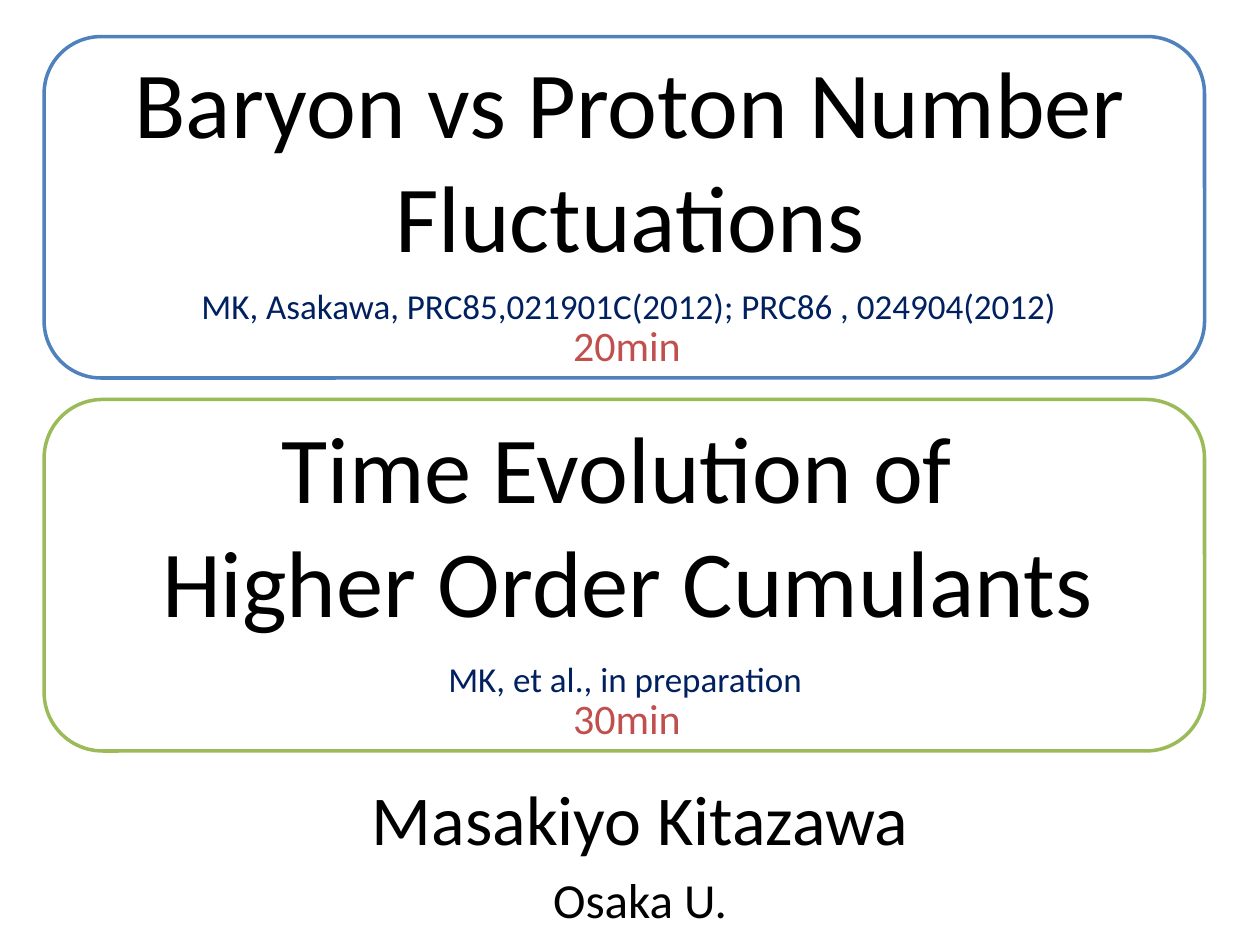
from dataclasses import dataclass

from pptx import Presentation
from pptx.dml.color import RGBColor
from pptx.enum.shapes import MSO_SHAPE
from pptx.enum.text import MSO_ANCHOR, PP_ALIGN
from pptx.slide import Slide
from pptx.util import Inches, Pt

WHITE = RGBColor(0xFF, 0xFF, 0xFF)
BLACK = RGBColor(0x00, 0x00, 0x00)
BLUE = RGBColor(0x4F, 0x81, 0xBD)
GREEN = RGBColor(0x9B, 0xBB, 0x59)
NAVY = RGBColor(0x00, 0x20, 0x60)
RED = RGBColor(0xC0, 0x50, 0x4D)


@dataclass
class Line:
    text: str
    size: float
    color: RGBColor = BLACK
    space_before: float = 0


@dataclass
class Label:
    left: float
    top: float
    width: float
    height: float
    lines: list[Line]
    align: PP_ALIGN = PP_ALIGN.CENTER
    wrap: bool = False
    anchor: MSO_ANCHOR = MSO_ANCHOR.TOP


@dataclass
class Topic:
    top: float
    height: float
    outline: RGBColor
    title: Label
    reference: Label
    duration: str


def add_frame(page: Slide, topic: Topic) -> None:
    frame = page.shapes.add_shape(
        MSO_SHAPE.ROUNDED_RECTANGLE,
        Inches(0.35), Inches(topic.top), Inches(9.21), Inches(topic.height),
    )
    frame.shadow.inherit = False
    frame.fill.solid()
    frame.fill.fore_color.rgb = WHITE
    frame.line.color.rgb = topic.outline
    frame.line.width = Pt(2)


def add_label(page: Slide, label: Label) -> None:
    box = page.shapes.add_textbox(
        Inches(label.left), Inches(label.top), Inches(label.width), Inches(label.height)
    )
    text_frame = box.text_frame
    text_frame.word_wrap = label.wrap
    text_frame.vertical_anchor = label.anchor
    for index, line in enumerate(label.lines):
        para = text_frame.add_paragraph() if index else text_frame.paragraphs[0]
        para.text = line.text
        para.alignment = label.align
        para.space_before = Pt(line.space_before)
        para.font.name = "Calibri"
        para.font.size = Pt(line.size)
        para.font.color.rgb = line.color


def add_topic(page: Slide, topic: Topic) -> None:
    add_frame(page, topic)
    add_label(page, topic.title)
    add_label(page, topic.reference)
    duration_top = topic.reference.top + 0.28
    duration = Line(topic.duration, 24, RED)
    add_label(page, Label(4.45, duration_top, 1.06, 0.5, [duration], PP_ALIGN.LEFT))


TOPICS = [
    Topic(
        0.29, 2.71, BLUE,
        Label(-0.22, 0.29, 10.44, 1.92, [Line("Baryon vs Proton Number Fluctuations", 54)],
              wrap=True, anchor=MSO_ANCHOR.MIDDLE),
        Label(1.5, 2.21, 7.05, 0.44,
              [Line("MK, Asakawa, PRC85,021901C(2012); PRC86 , 024904(2012)", 20, NAVY)],
              PP_ALIGN.LEFT),
        "20min",
    ),
    Topic(
        3.17, 2.79, GREEN,
        Label(1.15, 3.2, 7.66, 1.92,
              [Line("Time Evolution of ", 54), Line("Higher Order Cumulants", 54)]),
        Label(3.46, 5.17, 3.04, 0.44, [Line("MK, et al., in preparation", 20, NAVY)],
              PP_ALIGN.LEFT),
        "30min",
    ),
]
SPEAKER = Label(
    2.83, 6.11, 4.5, 1.34,
    [Line("Masakiyo Kitazawa", 40), Line("Osaka U.", 28, space_before=5.6)],
)


def main() -> None:
    deck = Presentation()
    deck.slide_width = Inches(10)
    deck.slide_height = Inches(7.5)
    page = deck.slides.add_slide(deck.slide_layouts[6])
    for topic in TOPICS:
        add_topic(page, topic)
    add_label(page, SPEAKER)
    deck.save("out.pptx")


if __name__ == "__main__":
    main()
